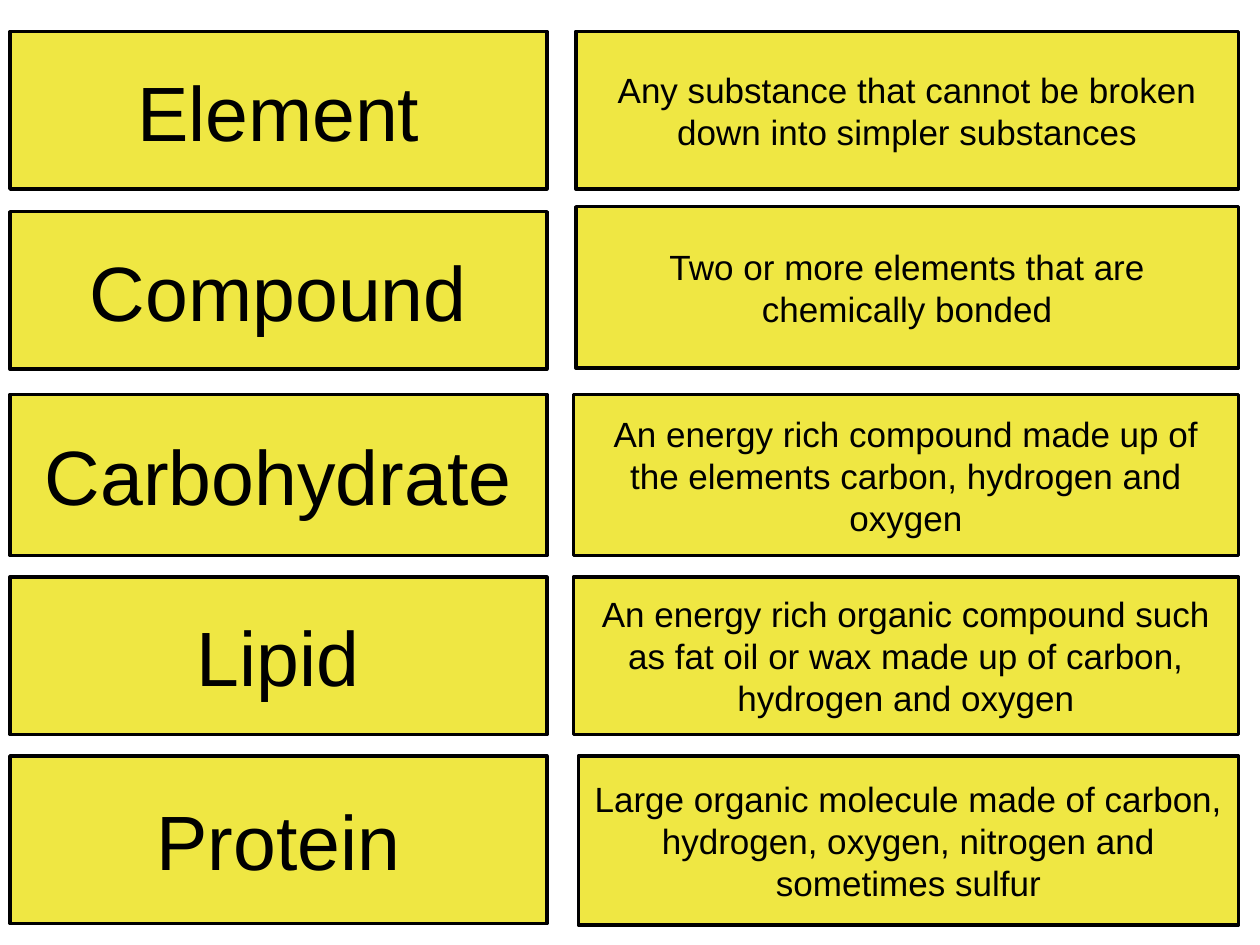
"""Build a slide of science terms beside their meanings."""
from typing import NamedTuple

from pptx import Presentation
from pptx.dml.color import RGBColor
from pptx.enum.shapes import MSO_SHAPE
from pptx.enum.text import MSO_ANCHOR, PP_ALIGN
from pptx.util import Inches, Pt

PROCESS = MSO_SHAPE.FLOWCHART_PROCESS
MIDDLE = MSO_ANCHOR.MIDDLE
CENTER = PP_ALIGN.CENTER

WIDTH, HEIGHT = Inches(10), Inches(7.5)
COLS, ROWS = 1000, 750
TERM_LEFT, TERM_RIGHT, MEANING_RIGHT = 8, 434, 983
TERM_SIZE, MEANING_SIZE = 44, 20
YELLOW, BLACK = "EFE743", "000000"


class Span(NamedTuple):
    """Top and height in grid rows."""
    top: int
    height: int


class Pair(NamedTuple):
    """A term and its meaning, with the rows each card fills."""
    term: str
    term_span: Span
    meaning: str
    left: int
    span: Span


PAIRS = [
    Pair("Element", Span(25, 125),
         "Any substance that cannot be broken down into simpler substances",
         457, Span(25, 125)),
    Pair("Compound", Span(168, 125),
         "Two or more elements that are chemically bonded",
         457, Span(164, 128)),
    Pair("Carbohydrate", Span(313, 128),
         "An energy rich compound made up of the elements carbon, "
         "hydrogen and oxygen",
         455, Span(313, 128)),
    Pair("Lipid", Span(458, 125),
         "An energy rich organic compound such as fat oil or wax made up "
         "of carbon, hydrogen and oxygen",
         455, Span(458, 125)),
    Pair("Protein", Span(600, 133),
         "Large organic molecule made of carbon, hydrogen, oxygen, "
         "nitrogen and sometimes sulfur",
         459, Span(600, 134)),
]


def color(code: str) -> RGBColor:
    """Turn a hex string into a colour."""
    return RGBColor.from_string(code)


def draw_card(slide, text: str, left: int, right: int, span: Span,
              size: int) -> None:
    """Draw one outlined card with centred text."""
    card = slide.shapes.add_shape(
        PROCESS, WIDTH * left // COLS, HEIGHT * span.top // ROWS,
        WIDTH * (right - left) // COLS, HEIGHT * span.height // ROWS)
    card.shadow.inherit = False
    card.fill.solid()
    card.fill.fore_color.rgb = color(YELLOW)
    card.line.color.rgb = color(BLACK)
    card.line.width = Pt(2)
    frame = card.text_frame
    frame.word_wrap = True
    frame.vertical_anchor = MIDDLE
    line = frame.paragraphs[0]
    line.text = text
    line.alignment = CENTER
    line.font.name = "Arial"
    line.font.size = Pt(size)
    line.font.color.rgb = color(BLACK)


def draw_pair(slide, pair: Pair) -> None:
    """Draw a term card and its meaning card."""
    draw_card(slide, pair.term, TERM_LEFT, TERM_RIGHT, pair.term_span,
              TERM_SIZE)
    draw_card(slide, pair.meaning, pair.left, MEANING_RIGHT, pair.span,
              MEANING_SIZE)


def main() -> None:
    """Build and save the deck."""
    deck = Presentation()
    deck.slide_width, deck.slide_height = WIDTH, HEIGHT
    slide = deck.slides.add_slide(deck.slide_layouts[6])
    for pair in PAIRS:
        draw_pair(slide, pair)
    deck.save("out.pptx")


if __name__ == "__main__":
    main()
